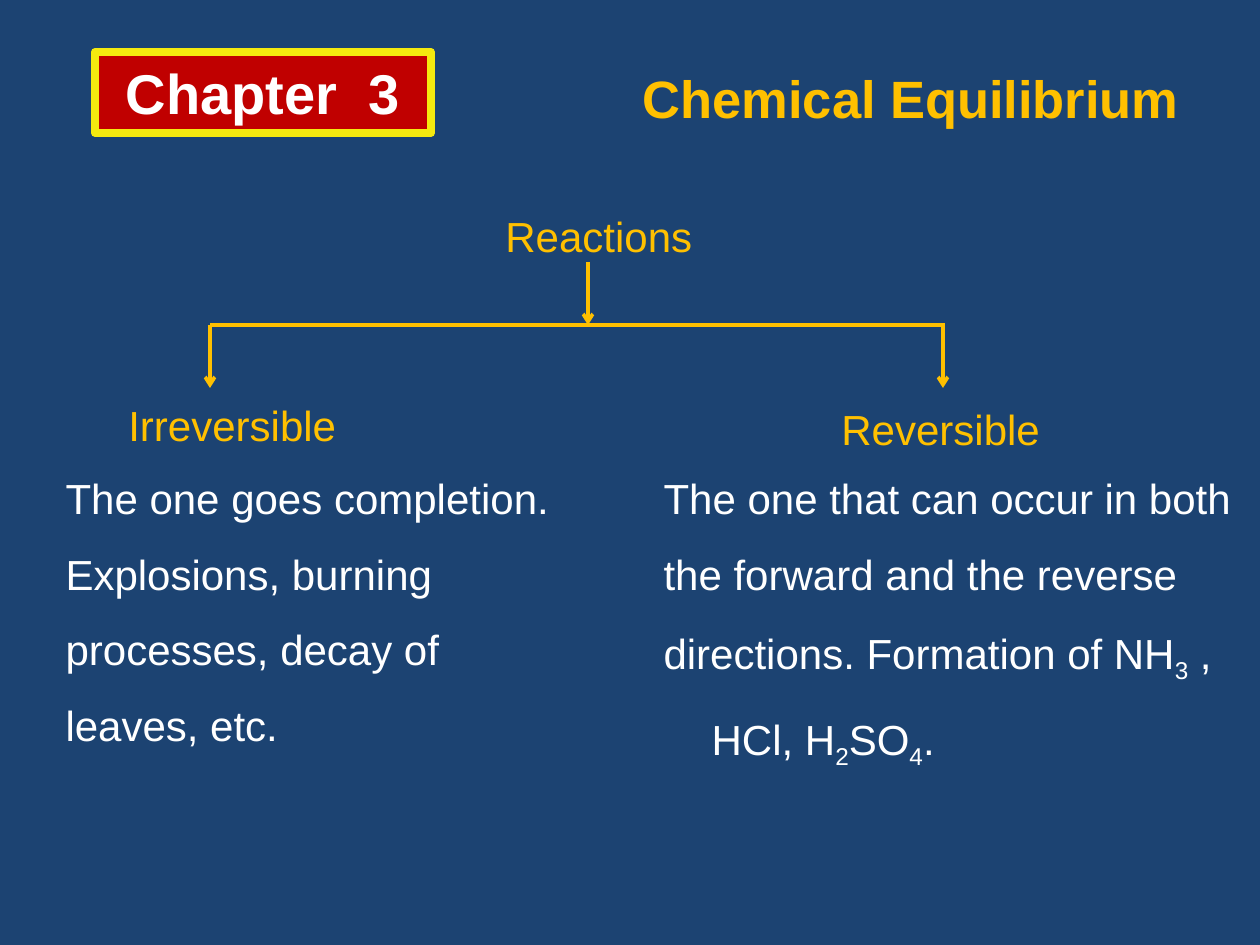
import pptx
import pptx.util
import pptx.dml.color
import pptx.enum.shapes
import pptx.enum.text
import pptx.oxml.ns
import lxml.etree

PX = 914400 / 126
COLORS = {"back": "1C4372", "gold": "FFC000", "red": "C00000",
          "yellow": "F5EA0F", "white": "FFFFFF"}
RGB = {name: pptx.dml.color.RGBColor.from_string(c) for name, c in COLORS.items()}
ALIGN = pptx.enum.text.PP_ALIGN
ANCHOR = pptx.enum.text.MSO_ANCHOR


def px(*values):
    """Convert pixels to EMU."""
    return [round(v * PX) for v in values]


def write(p, text, color, size=24, bold=False, indent=0, align=ALIGN.LEFT, spacing=1.5):
    """Fill a paragraph; digits after an underscore become subscripts."""
    for name, value in {"alignment": align, "line_spacing": spacing,
                        "space_before": pptx.util.Pt(0)}.items():
        setattr(p, name, value)
    pPr = p._p.get_or_add_pPr()
    hang = px(indent)[0]
    pPr.set("marL", str(hang))
    pPr.set("indent", str(-hang))
    lxml.etree.SubElement(pPr, pptx.oxml.ns.qn("a:buNone"))
    for i, part in enumerate(text.split("_")):
        pieces = [(part[:1], True), (part[1:], False)] if i else [(part, False)]
        for piece, subscript in pieces:
            r = p.add_run()
            r.text = piece
            for name, value in {"name": "Arial", "size": pptx.util.Pt(size),
                                "bold": bold}.items():
                setattr(r.font, name, value)
            r.font.color.rgb = RGB[color]
            if subscript:
                r.font._element.set("baseline", "-25000")


prs = pptx.Presentation()
prs.slide_width, prs.slide_height = px(1260, 945)
s = prs.slides.add_slide(prs.slide_layouts[3])
s.background.fill.solid()
s.background.fill.fore_color.rgb = RGB["back"]
title, left, right = list(s.placeholders)[:3]
for sp in list(s.placeholders)[3:]:
    sp._element.getparent().remove(sp._element)

# Title and the two descriptions
bodies = [
    (title, (630, 60, 577, 77), 0, ["Chemical Equilibrium"],
     {"color": "gold", "size": 30, "bold": True, "spacing": 1.0}),
    (left, (53, 441, 630, 318), 32,
     ["The one goes completion.", "Explosions, burning",
      "processes, decay of", "leaves, etc."], {"color": "white"}),
    (right, (651, 441, 609, 318), 48,
     ["The one that can occur in both", "the forward and the reverse",
      "directions. Formation of NH_3 , HCl, H_2SO_4."], {"color": "white"}),
]
for sp, box, indent, lines, style in bodies:
    sp.left, sp.top, sp.width, sp.height = px(*box)
    tf = sp.text_frame
    tf.auto_size = pptx.enum.text.MSO_AUTO_SIZE.NONE
    tf.vertical_anchor = ANCHOR.TOP
    for i, line in enumerate(lines):
        p = tf.add_paragraph() if i else tf.paragraphs[0]
        write(p, line, indent=indent, **style)

# Chapter badge
badge = s.shapes.add_shape(pptx.enum.shapes.MSO_SHAPE.RECTANGLE, *px(95, 52, 336, 81))
badge.shadow.inherit = False
badge.fill.solid()
badge.fill.fore_color.rgb = RGB["red"]
badge.line.color.rgb = RGB["yellow"]
badge.line.width = pptx.util.Pt(4.5)
badge.text_frame.vertical_anchor = ANCHOR.MIDDLE
write(badge.text_frame.paragraphs[0], "Chapter  3", "white", size=32, bold=True,
      align=ALIGN.CENTER, spacing=1.0)

# Reaction tree
tree = s.shapes.add_group_shape()
labels = [("Reactions", 493, 179, 231), ("Irreversible", 116, 368, 252),
          ("Reversible", 829, 372, 252)]
for text, x, y, width in labels:
    tf = tree.shapes.add_textbox(*px(x, y, width, 79)).text_frame
    tf.word_wrap = True
    write(tf.paragraphs[0], text, "gold", indent=32)

BAR_Y, DROP = 325, 63
branches = [(210, BAR_Y, 945, BAR_Y, False)]
branches += [(x, y, x, y + DROP, True)
             for x, y in [(588, BAR_Y - DROP), (210, BAR_Y), (943, BAR_Y)]]
for x1, y1, x2, y2, arrow in branches:
    line = tree.shapes.add_connector(pptx.enum.shapes.MSO_CONNECTOR.STRAIGHT,
                                     *px(x1, y1, x2, y2))
    line.line.color.rgb = RGB["gold"]
    line.line.width = pptx.util.Pt(2)
    if arrow:
        lxml.etree.SubElement(line.line._get_or_add_ln(),
                              pptx.oxml.ns.qn("a:tailEnd"), type="arrow")
    lxml.etree.SubElement(line._element.spPr, pptx.oxml.ns.qn("a:effectLst"))

prs.save("out.pptx")
